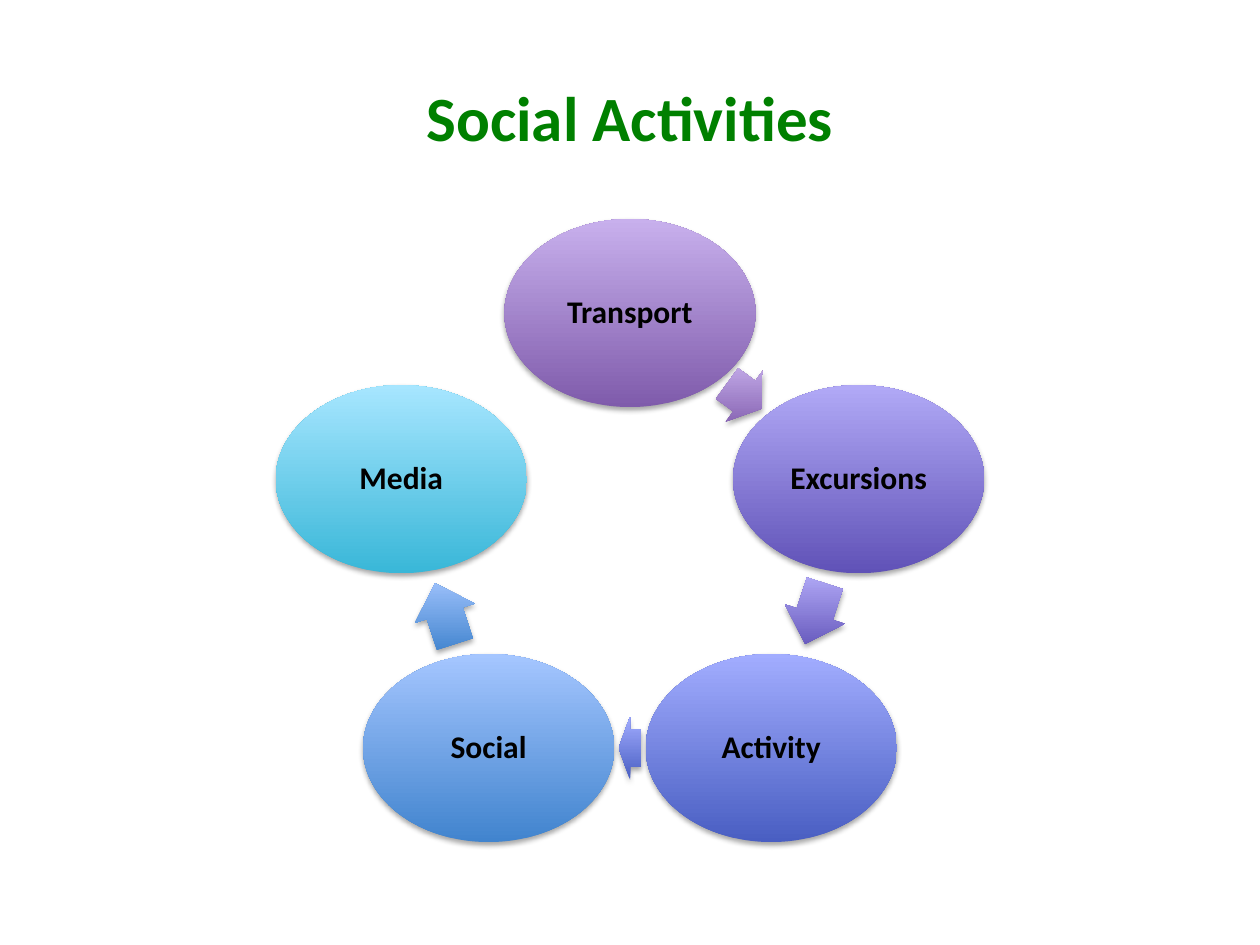
from math import cos, radians, sin

from lxml.etree import SubElement
from pptx import Presentation
from pptx.dml.color import RGBColor
from pptx.enum.shapes import MSO_SHAPE
from pptx.enum.text import MSO_ANCHOR, PP_ALIGN
from pptx.oxml.ns import qn
from pptx.util import Pt

COLORS = {"title": "008000", "label": "000000", "shadow": "000000"}

# Label, dark and light colour, length of the arrow to the next step
STEPS = [
    ("Transport", "7F5BAB", "C8B0ED", 24.5),
    ("Excursions", "6052B7", "B1A9F6", 36.5),
    ("Activity", "495EC2", "A2ADFF", 13),
    ("Social", "4184CE", "A5C6FF", 36.5),
    ("Media", "39B7D8", "A7E6FF", None),
]


def write(shape, text, size=18, color="label", inset=2, spacing=0.9):
    frame = shape.text_frame
    frame.word_wrap = True
    frame.vertical_anchor = MSO_ANCHOR.MIDDLE
    frame.margin_left = frame.margin_right = Pt(inset)
    frame.margin_top = frame.margin_bottom = Pt(inset)
    para = frame.paragraphs[0]
    para.alignment = PP_ALIGN.CENTER
    para.line_spacing = spacing
    run = para.add_run()
    run.text = text
    run.font.name = "Calibri"
    run.font.size = Pt(size)
    run.font.bold = True
    run.font.color.rgb = RGBColor.from_string(COLORS[color])


def add_part(kind, turn, reach, width, height, dark, light):
    """Add a shaded shape on the ring, turn degrees clockwise from the top."""
    x = MID_X + reach * sin(radians(turn))
    y = MID_Y - reach * cos(radians(turn))
    part = slide.shapes.add_shape(
        kind, Pt(x - width / 2), Pt(y - height / 2), Pt(width), Pt(height))
    part.line.fill.background()
    part.fill.gradient()
    part.fill.gradient_angle = 90
    for stop, color in zip(part.fill.gradient_stops, (dark, light)):
        stop.color.rgb = RGBColor.from_string(color)
    # Keep the shading upright when the shape is rotated
    props = part._element.spPr
    props.find(qn("a:gradFill")).set("rotWithShape", "0")
    # Soft shadow below
    part.shadow.inherit = False
    outer = SubElement(
        props.find(qn("a:effectLst")), qn("a:outerShdw"),
        blurRad=str(Pt(3.1)), dist=str(Pt(1.8)), dir="5400000", rotWithShape="0")
    tint = SubElement(outer, qn("a:srgbClr"), val=COLORS["shadow"])
    SubElement(tint, qn("a:alpha"), val="35000")
    return part


deck = Presentation()
deck.slide_width, deck.slide_height = Pt(720), Pt(540)
slide = deck.slides.add_slide(deck.slide_layouts[6])

# Title
title = slide.shapes.add_textbox(Pt(36), Pt(21.6), Pt(648), Pt(90))
write(title, "Social Activities", size=36, color="title", inset=4, spacing=1)

# Ring of steps, with arrows halfway between neighbours
MID_X, MID_Y, RADIUS = 360, 316.3, 137.4
STEP = 360 / len(STEPS)
for i, (label, dark, light, length) in enumerate(STEPS):
    oval = add_part(MSO_SHAPE.OVAL, i * STEP, RADIUS, 143.5, 107.5, dark, light)
    write(oval, label)
    if length:
        turn = (i + 0.5) * STEP
        arrow = add_part(MSO_SHAPE.RIGHT_ARROW, turn, RADIUS * cos(radians(STEP / 2)),
                         length, 36, dark, light)
        arrow.rotation = turn
        arrow.adjustments[0] = 0.6
        arrow.adjustments[1] = 0.5

deck.save("out.pptx")
